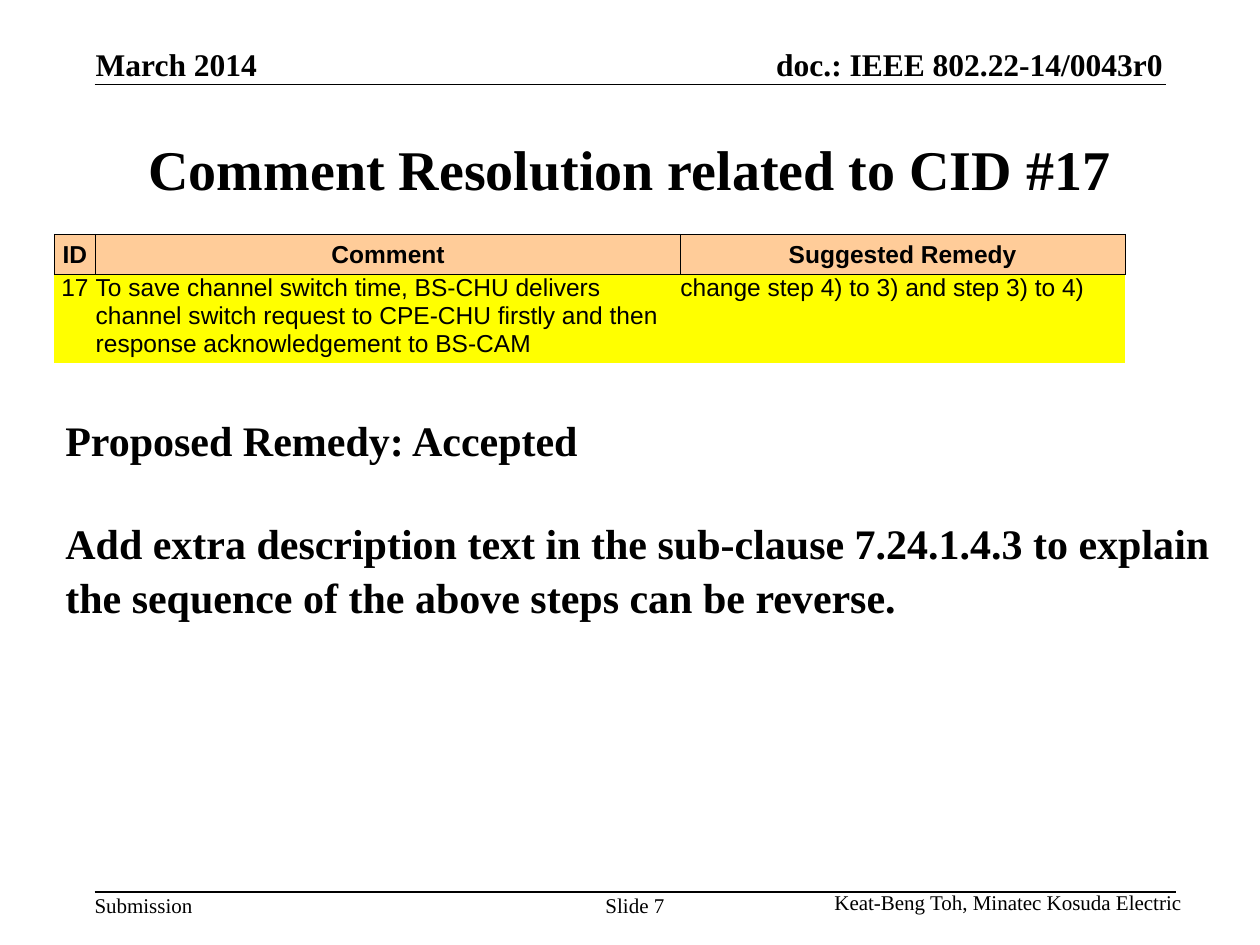
from lxml.etree import SubElement
from pptx import Presentation
from pptx.dml.color import RGBColor
from pptx.enum.shapes import MSO_CONNECTOR
from pptx.enum.text import MSO_ANCHOR as Anchor, PP_ALIGN as Align
from pptx.oxml.ns import qn
from pptx.util import Inches, Pt

SERIF, SANS = "Times New Roman", "Arial"
BLACK, PEACH, YELLOW = "000000", "FFCC99", "FFFF00"


def rgb(color):
    return RGBColor.from_string(color)


def write(frame, *lines, size=12, font=SERIF, bold=False, color=BLACK,
          align=Align.LEFT, gaps=()):
    """Fill a text frame with one paragraph per line; gaps are points above each."""
    for number, line in enumerate(lines):
        paragraph = frame.add_paragraph() if number else frame.paragraphs[0]
        paragraph.alignment = align
        if gaps:
            paragraph.space_before = Pt(gaps[number])
        run = paragraph.add_run()
        run.text = line
        run.font.size, run.font.name, run.font.bold = Pt(size), font, bold
        run.font.color.rgb = rgb(color)


def set_borders(cell, visible):
    """Draw thin lines on the sides named in visible (of L, R, T, B), none elsewhere."""
    properties = cell._tc.get_or_add_tcPr()
    for position, side in enumerate("LRTB"):
        border = SubElement(properties, qn(f"a:ln{side}"), w=str(Pt(0.5)))
        if side in visible:
            fill = SubElement(border, qn("a:solidFill"))
            SubElement(fill, qn("a:srgbClr"), val=BLACK)
        else:
            SubElement(border, qn("a:noFill"))
        properties.insert(position, border)


class SlideBuilder:
    """Places elements by percentages of the slide's width and height."""

    def __init__(self, deck):
        self.width, self.height = deck.slide_width, deck.slide_height
        self.slide = deck.slides.add_slide(deck.slide_layouts[6])

    def x(self, percent):
        return round(self.width * percent / 100)

    def y(self, percent):
        return round(self.height * percent / 100)

    def area(self, left, top, width, height):
        return self.x(left), self.y(top), self.x(width), self.y(height)

    def text(self, area, *lines, anchor=Anchor.TOP, inset=(0, 0), wrap=False, **style):
        frame = self.slide.shapes.add_textbox(*self.area(*area)).text_frame
        frame.word_wrap, frame.vertical_anchor = wrap, anchor
        frame.margin_left = frame.margin_right = Inches(inset[0])
        frame.margin_top = frame.margin_bottom = Inches(inset[1])
        write(frame, *lines, **style)

    def rule(self, left, right, top):
        line = self.slide.shapes.add_connector(
            MSO_CONNECTOR.STRAIGHT, self.x(left), self.y(top), self.x(right), self.y(top))
        line.line.color.rgb, line.line.width = rgb(BLACK), Pt(1)
        SubElement(line._element.spPr, qn("a:effectLst"))

    def table(self, left, top, columns, rows, content):
        area = self.area(left, top, sum(columns), sum(rows))
        table = self.slide.shapes.add_table(len(rows), len(columns), *area).table
        for column, share in zip(table.columns, columns):
            column.width = self.x(share)
        for row, share in zip(table.rows, rows):
            row.height = self.y(share)
        for r, texts in enumerate(content):
            header = r == 0
            for c, text in enumerate(texts):
                cell = table.cell(r, c)
                cell.margin_left = cell.margin_right = 0
                cell.margin_top = cell.margin_bottom = 0
                cell.vertical_anchor = Anchor.MIDDLE if header else Anchor.TOP
                cell.fill.solid()
                cell.fill.fore_color.rgb = rgb(PEACH if header else YELLOW)
                set_borders(cell, "LRTB" if header else "T")
                write(cell.text_frame, text, size=14, font=SANS, bold=header,
                      align=Align.CENTER if header or c == 0 else Align.LEFT)


def main():
    deck = Presentation()
    deck.slide_width, deck.slide_height = Inches(10), Inches(7.5)
    page = SlideBuilder(deck)

    heading = dict(size=18, bold=True, anchor=Anchor.BOTTOM)
    page.text((7.6, 4.8, 12.9, 4), "March 2014", **heading)
    page.text((56.3, 4.8, 36, 4), "doc.: IEEE 802.22-14/0043r0",
              align=Align.RIGHT, **heading)
    page.rule(7.5, 92.5, 8.93)

    page.text((7.5, 10, 85, 15.6), "Comment Resolution related to CID #17", size=32,
              bold=True, align=Align.CENTER, anchor=Anchor.MIDDLE,
              inset=(0.1, 0.05), wrap=True)
    page.table(4.3, 24.8, columns=(3.3, 46.4, 35.3), rows=(4.27, 9.2), content=(
        ("ID", "Comment", "Suggested Remedy"),
        ("17",
         "To save channel switch time, BS-CHU delivers channel switch request to "
         "CPE-CHU firstly and then response acknowledgement to BS-CAM",
         "change step 4) to 3) and step 3) to 4)"),
    ))
    page.text((4.2, 43.2, 96.1, 22.93),
              "Proposed Remedy: Accepted",
              "Add extra description text in the sub-clause 7.24.1.4.3 to explain",
              "the sequence of the above steps can be reverse.",
              size=24, bold=True, inset=(0.1, 0.05), gaps=(2, 30, 2))

    page.rule(7.5, 93.3, 94.4)
    page.text((7.5, 94.4, 7.8, 2.67), "Submission")
    page.text((47.1, 94.4, 6.6, 2.67), "Slide 7", align=Align.CENTER)
    page.text((66, 94.13, 27.8, 2.67), "Keat-Beng Toh, Minatec Kosuda Electric",
              align=Align.RIGHT)
    deck.save("out.pptx")


if __name__ == "__main__":
    main()
